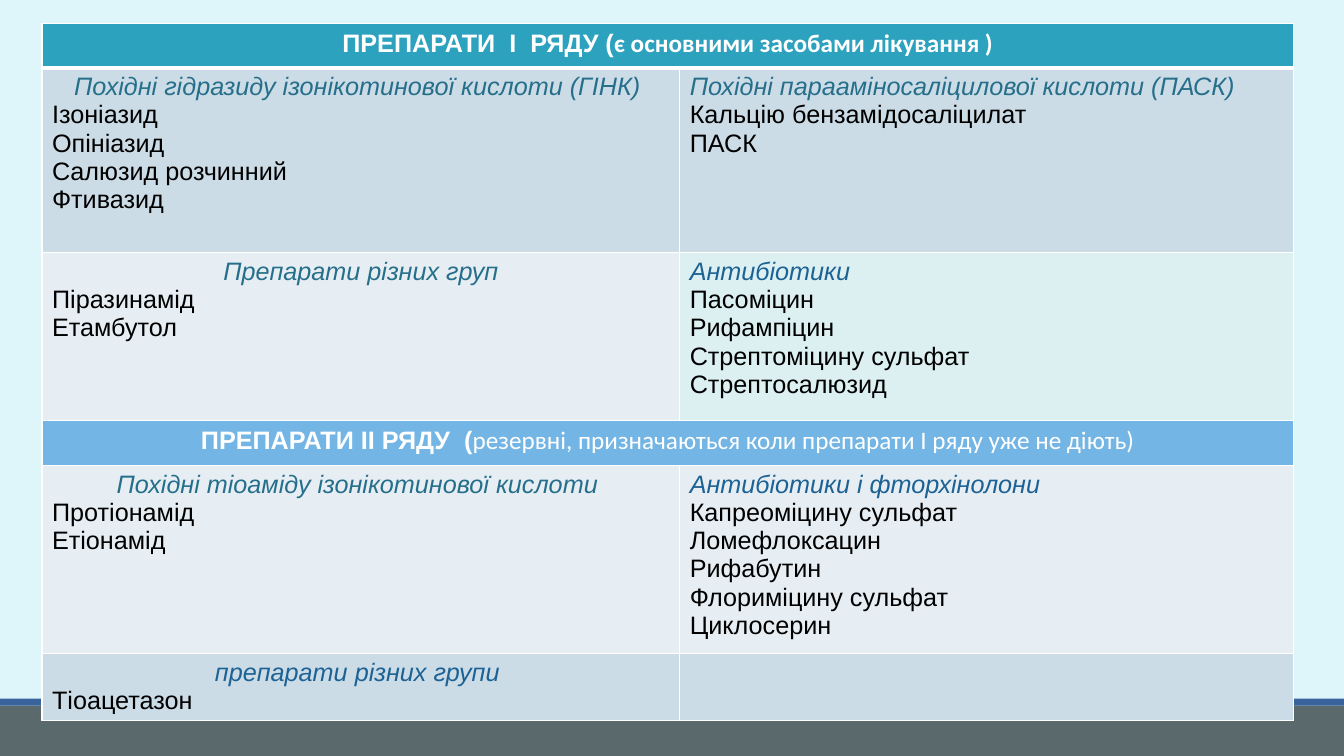
from dataclasses import dataclass

from pptx import Presentation, util as u
from pptx.dml.color import RGBColor
from pptx.enum import shapes, text
from pptx.oxml import parse_xml
from pptx.oxml.ns import nsdecls


@dataclass(frozen=True)
class Theme:
    background: str = "DEF5FA"
    footer: str = "5A696B"
    footer_line: str = "39639D"
    first_line: str = "2DA2BF"
    second_line: str = "73B5E4"
    dark: str = "CCDCE6"
    light: str = "E7EEF3"
    mint: str = "DCF0F2"
    teal: str = "266F8B"
    blue: str = "1C6294"
    ink: str = "000000"
    white: str = "FFFFFF"
    body_font: str = "Arial"
    note_font: str = "Calibri"
    size: int = 18
    border: int = 1
    thick_border: int = 3


class SlideBuilder:
    def __init__(self, s, theme):
        self.s, self.theme = s, theme
        s.background.fill.solid()
        s.background.fill.fore_color.rgb = RGBColor.from_string(theme.background)

    def rect(self, x, y, w, h, color):
        sp = self.s.shapes.add_shape(
            shapes.MSO_SHAPE.RECTANGLE, u.Pt(x), u.Pt(y), u.Pt(w), u.Pt(h))
        sp.shadow.inherit = False
        sp.fill.solid()
        sp.fill.fore_color.rgb = RGBColor.from_string(color)
        sp.line.fill.background()

    def table(self, x, y, widths, heights):
        frame = self.s.shapes.add_table(
            len(heights), len(widths), u.Pt(x), u.Pt(y),
            u.Pt(sum(widths)), u.Pt(sum(heights)))
        tbl = frame.table
        tbl.first_row = tbl.horz_banding = False
        for col, width in zip(tbl.columns, widths):
            col.width = u.Pt(width)
        for row, height in zip(tbl.rows, heights):
            row.height = u.Pt(height)
        return tbl

    def cell(self, cell, color, top=None, bottom=None):
        """Draw the borders, then the fill: the schema wants this order."""
        t = self.theme
        tc_pr = cell._tc.get_or_add_tcPr()
        for side, width in zip("LRTB", (None, None, top, bottom)):
            tc_pr.append(parse_xml(
                f'<a:ln{side} {nsdecls("a")} w="{u.Pt(width or t.border)}"><a:solidFill>'
                f'<a:srgbClr val="{t.white}"/></a:solidFill></a:ln{side}>'))
        cell.fill.solid()
        cell.fill.fore_color.rgb = RGBColor.from_string(color)

    def font(self, font, color, name=None, bold=False, italic=False):
        font.name = name or self.theme.body_font
        font.size = u.Pt(self.theme.size)
        font.bold, font.italic = bold, italic
        font.color.rgb = RGBColor.from_string(color)

    def banner(self, cell, title, note, bold_note):
        t = self.theme
        p = cell.text_frame.paragraphs[0]
        p.alignment = text.PP_ALIGN.CENTER
        for words, name, bold in ((title, t.body_font, True),
                                  (note, t.note_font, bold_note)):
            r = p.add_run()
            r.text = words
            self.font(r.font, t.white, name, bold)

    def drug_group(self, cell, heading, color, drugs, centred):
        tf = cell.text_frame
        tf.text = "\n".join([heading, *drugs])
        title, *names = tf.paragraphs
        title.alignment = text.PP_ALIGN.CENTER if centred else text.PP_ALIGN.LEFT
        self.font(title.font, color, italic=True)
        for p in names:
            self.font(p.font, self.theme.ink)


def main():
    prs = Presentation()
    prs.slide_width, prs.slide_height = u.Pt(960), u.Pt(540)
    t = Theme()
    b = SlideBuilder(prs.slides.add_slide(prs.slide_layouts[6]), t)

    b.rect(0, 504, 960, 36, t.footer)
    b.rect(0, 499, 960, 5, t.footer_line)

    banners = {
        0: ("ПРЕПАРАТИ  І  РЯДУ (", "є основними засобами лікування )", True, t.first_line),
        3: ("ПРЕПАРАТИ ІІ РЯДУ  (",
            "резервні, призначаються коли препарати I ряду уже не діють)",
            False, t.second_line),
    }
    # (row, column): heading, heading colour, drugs, fill
    groups = {
        (1, 0): ("Похідні гідразиду ізонікотинової кислоти (ГІНК) ", t.teal,
                 ["Ізоніазид", "Опініазид", "Салюзид розчинний", "Фтивазид"], t.dark),
        (1, 1): ("Похідні парааміносаліцилової кислоти (ПАСК)", t.teal,
                 ["Кальцію бензамідосаліцилат", "ПАСК"], t.dark),
        (2, 0): ("Препарати різних груп", t.teal, ["Піразинамід", "Етамбутол"], t.light),
        (2, 1): ("Антибіотики", t.blue,
                 ["Пасоміцин", "Рифампіцин", "Стрептоміцину сульфат", "Стрептосалюзид"],
                 t.mint),
        (4, 0): ("Похідні тіоаміду ізонікотинової кислоти ", t.teal,
                 ["Протіонамід", "Етіонамід"], t.light),
        (4, 1): ("Антибіотики і фторхінолони", t.blue,
                 ["Капреоміцину сульфат", "Ломефлоксацин", "Рифабутин",
                  "Флориміцину сульфат", "Циклосерин"], t.light),
        (5, 0): ("препарати різних групи ", t.blue, ["Тіоацетазон"], t.dark),
        (5, 1): ("", t.blue, [], t.dark),
    }

    tbl = b.table(30, 16.5, (455.5, 438.5), (32, 132, 120, 32, 134.5, 47.5))
    for row, (title, note, bold_note, color) in banners.items():
        first, last = tbl.cell(row, 0), tbl.cell(row, 1)
        first.merge(last)
        for cell in (first, last):
            b.cell(cell, color, bottom=t.thick_border if row == 0 else None)
        b.banner(first, title, note, bold_note)
    for (row, col), (heading, color, drugs, fill) in groups.items():
        cell = tbl.cell(row, col)
        b.cell(cell, fill, top=t.thick_border if row == 1 else None)
        b.drug_group(cell, heading, color, drugs, centred=col == 0)

    prs.save("out.pptx")


if __name__ == "__main__":
    main()
